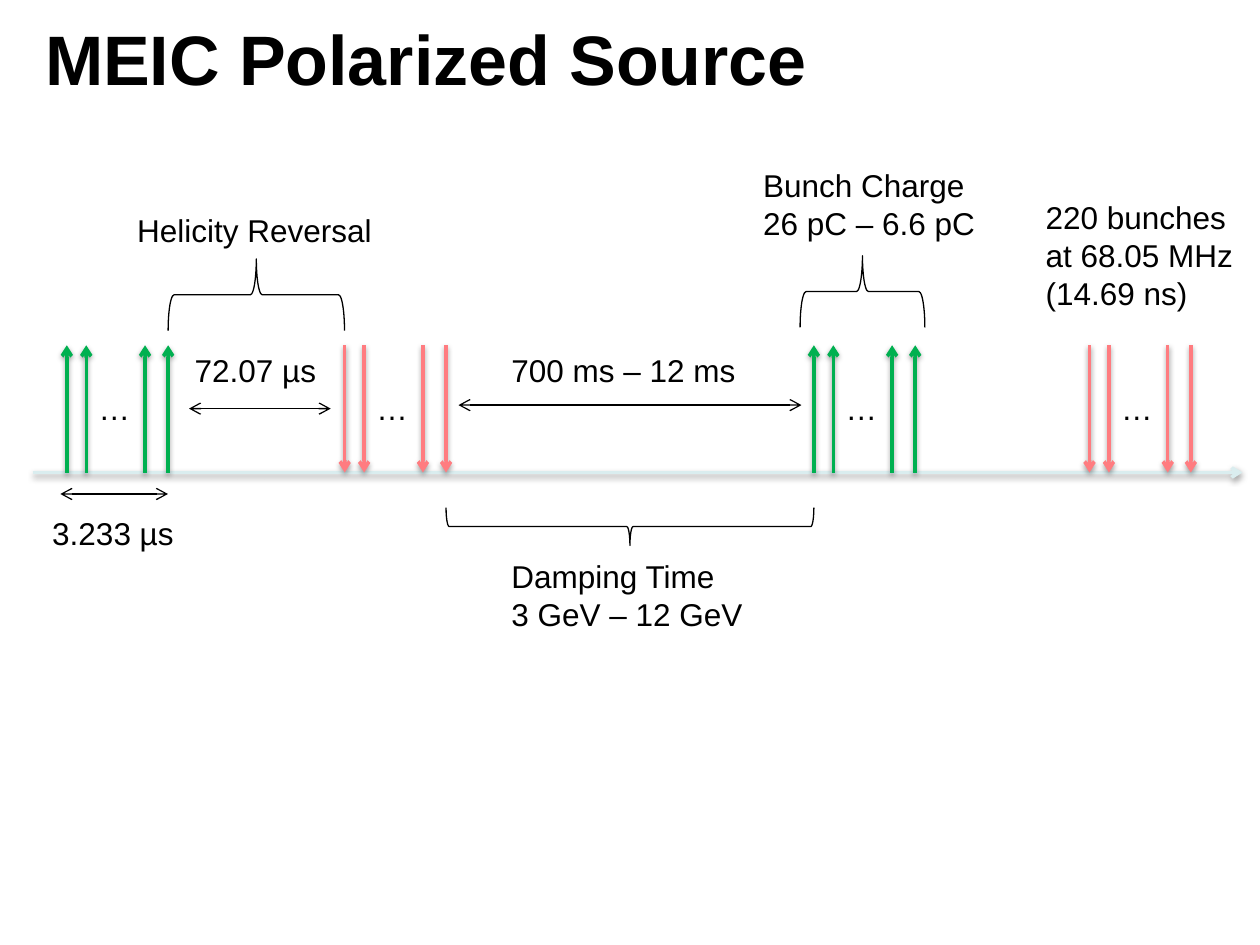
from lxml import etree
from pptx import Presentation
from pptx.dml.color import RGBColor
from pptx.enum.shapes import MSO_CONNECTOR, MSO_SHAPE
from pptx.enum.text import MSO_ANCHOR, MSO_AUTO_SIZE
from pptx.oxml.ns import qn
from pptx.util import Pt

STRAIGHT = MSO_CONNECTOR.STRAIGHT
LEFT_BRACE = MSO_SHAPE.LEFT_BRACE
MIDDLE = MSO_ANCHOR.MIDDLE
GROW = MSO_AUTO_SIZE.SHAPE_TO_FIT_TEXT

COLORS = {"black": "000000", "axis": "DAEDEF", "up": "00B050", "down": "FF7C80"}
LABEL_FORMAT = {"name": "Arial", "size": Pt(18), "bold": False}
TITLE_FORMAT = {"name": "Arial", "size": Pt(40), "bold": True}


def add_text(shapes, lines, left, top, width, height, format_values):
    box = shapes.add_textbox(Pt(left), Pt(top), Pt(width), Pt(height))
    frame = box.text_frame
    frame.word_wrap = False
    frame.text = "\n".join(lines)
    for para in frame.paragraphs:
        for span in para.runs:
            for name, value in format_values.items():
                setattr(span.font, name, value)
            span.font.color.rgb = RGBColor.from_string(COLORS["black"])
    return box


def add_arrow(shapes, start, end, color, weight, ends, shadow):
    arrow = shapes.add_connector(STRAIGHT, *[Pt(value) for value in (*start, *end)])
    arrow.line.color.rgb = RGBColor.from_string(COLORS[color])
    arrow.line.width = Pt(weight)
    outline = arrow.line._get_or_add_ln()
    for tag in ends:
        etree.SubElement(outline, qn(tag), type="arrow")
    effects = etree.SubElement(arrow._element.spPr, qn("a:effectLst"))
    if shadow:
        outer = etree.SubElement(
            effects, qn("a:outerShdw"), blurRad=str(Pt(3.1)), dist=str(Pt(1.6)),
            dir="5400000", rotWithShape="0")
        tint = etree.SubElement(outer, qn("a:srgbClr"), val=COLORS["black"])
        etree.SubElement(tint, qn("a:alpha"), val="38000")


deck = Presentation()
deck.slide_width, deck.slide_height = Pt(720), Pt(540)
page = deck.slides.add_slide(deck.slide_layouts[6])

title = add_text(page.shapes, ["MEIC Polarized Source"], 18.7, 0, 682.6, 66.2, TITLE_FORMAT)
title.text_frame.word_wrap = True
title.text_frame.vertical_anchor = MIDDLE

AXIS_Y, PULSE_TOP = 270, 197.3
add_arrow(page.shapes, (18.7, AXIS_Y), (710, AXIS_Y), "axis", 2, ["a:tailEnd"], True)

PULSE_OFFSETS = (0, 11.1, 44.7, 57.9)
TRAINS = [(38.2, "up", "a:tailEnd"), (465.1, "up", "a:tailEnd"),
          (197, "down", "a:headEnd"), (622.6, "down", "a:headEnd")]
for left, color, tip in TRAINS:
    train = page.shapes.add_group_shape()
    for offset in PULSE_OFFSETS:
        x = left + offset
        add_arrow(train.shapes, (x, AXIS_Y), (x, PULSE_TOP), color, 2, [tip], True)
    add_text(train.shapes, ["…"], left + 11, 218.9, 32.4, 29, LABEL_FORMAT)

for left, right, y in [(108, 189, 233.5), (262, 458, 231.5), (34.5, 96, 282.3)]:
    add_arrow(page.shapes, (left, y), (right, y), "black", 0.75,
              ["a:headEnd", "a:tailEnd"], False)

BRACES = [(349.2, 195.8, 21.6, 210.2, False),
          (126, 118.1, 41, 100.8, True),
          (472.3, 131, 41, 71.3, True)]
for left, top, width, height, points_up in BRACES:
    brace = page.shapes.add_shape(LEFT_BRACE, Pt(left), Pt(top), Pt(width), Pt(height))
    brace.rotation = 270
    brace.shadow.inherit = False
    brace.fill.background()
    brace.line.color.rgb = RGBColor.from_string(COLORS["black"])
    brace.line.width = Pt(0.75)
    if points_up:
        brace._element.spPr.xfrm.set("flipH", "1")

LABELS = [
    (["Helicity Reversal"], 71.3, 116.8, 149.8),
    (["72.07 µs"], 104.2, 197.3, 84.2),
    (["Damping Time", "3 GeV – 12 GeV"], 285.1, 314.8, 147.6),
    (["700 ms – 12 ms"], 285.1, 197.3, 144),
    (["3.233 µs"], 22.8, 290.4, 84.2),
    (["Bunch Charge", "26 pC – 6.6 pC"], 429, 91.4, 141.8),
    (["220 bunches", "at 68.05 MHz", "(14.69 ns)"], 590.4, 109.6, 122.4),
]
for lines, left, top, width in LABELS:
    height = 7.2 + 21.8 * len(lines)
    label = add_text(page.shapes, lines, left, top, width, height, LABEL_FORMAT)
    label.text_frame.auto_size = GROW

deck.save("out.pptx")
